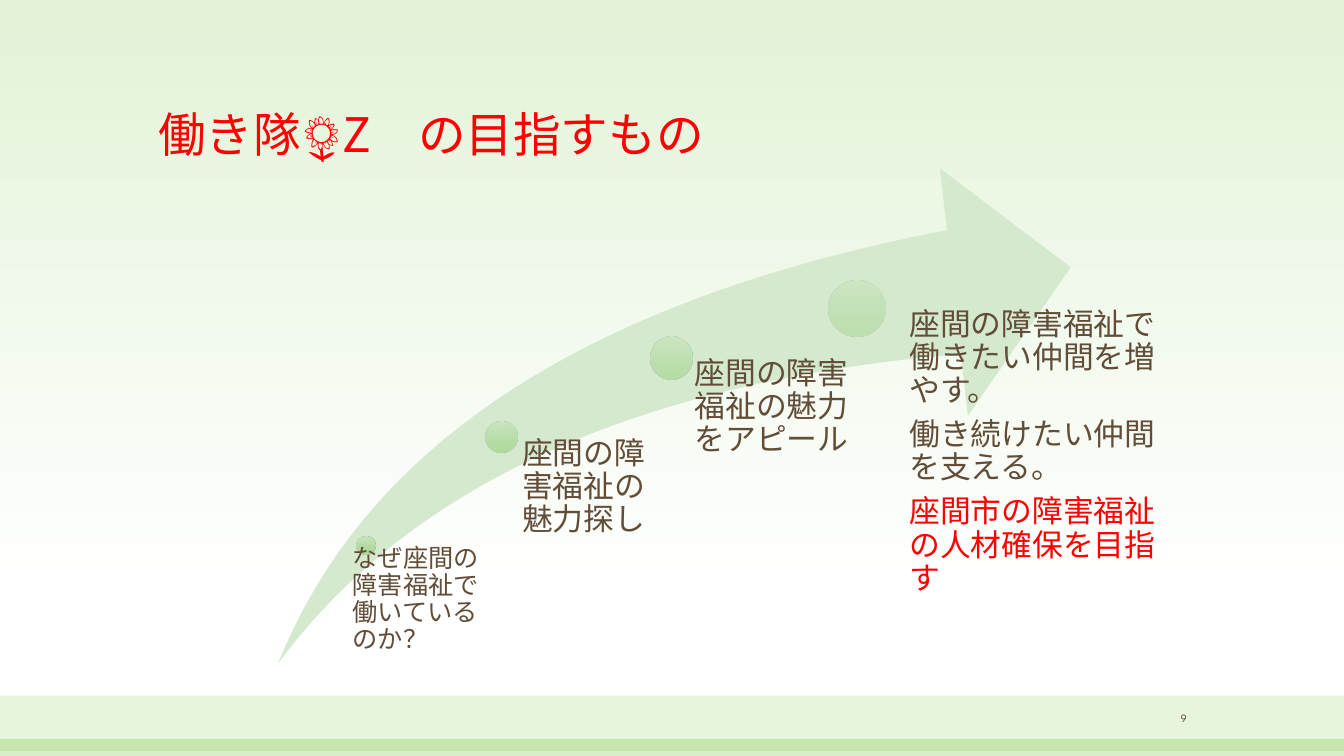
from copy import deepcopy
from lxml.etree import SubElement
from pptx import Presentation
from pptx.dml.color import RGBColor
from pptx.enum.shapes import MSO_SHAPE as Shape
from pptx.enum.text import MSO_ANCHOR as Anchor, MSO_AUTO_SIZE as AutoSize, PP_ALIGN as Align
from pptx.oxml.ns import qn
from pptx.util import Pt

PX = 9144  # 100 px to the inch
JAPANESE = "Noto Sans CJK JP"
BROWN, RED, GREEN = "624D38", "FF0000", "72C23C"


def paint(fill, *colours, positions=(), alpha=100):
    """Fill with one colour, or with a downward gradient of several."""
    if len(colours) == 1:
        fill.solid()
        fill.fore_color.rgb = RGBColor.from_string(colours[0])
    else:
        fill.gradient()
        fill.gradient_angle = 270
        stop_list = fill._xPr.find(".//" + qn("a:gsLst"))
        for _ in colours[2:]:
            stop_list.append(deepcopy(stop_list[0]))
        for stop, colour, position in zip(fill.gradient_stops, colours, positions):
            stop.color.rgb = RGBColor.from_string(colour)
            stop.position = position
    if alpha < 100:
        for colour in fill._xPr.iter(qn("a:srgbClr")):
            SubElement(colour, qn("a:alpha"), val=str(alpha * 1000))


def write(frame, text, size, colours=(BROWN,), font=JAPANESE, align=Align.LEFT,
          anchor=Anchor.TOP, insets=(10, 5, 10, 5), leading=0.9, after=0):
    """Write one paragraph a line; the last colour serves any further lines."""
    frame.word_wrap = True
    frame.auto_size = AutoSize.NONE
    frame.vertical_anchor = anchor
    (frame.margin_left, frame.margin_top,
     frame.margin_right, frame.margin_bottom) = [inset * PX for inset in insets]
    frame.text = text
    for i, paragraph in enumerate(frame.paragraphs):
        paragraph.alignment = align
        paragraph.line_spacing = leading
        paragraph.space_before = Pt(0)
        paragraph.space_after = Pt(after)
        for run in paragraph.runs:
            run.font.size = Pt(size)
            run.font.name = font
            paint(run.font.fill, colours[min(i, len(colours) - 1)])
            SubElement(run.font._element, qn("a:ea"), typeface=font)


deck = Presentation()
deck.slide_width, deck.slide_height = 1333 * PX, 750 * PX
slide = deck.slides.add_slide(deck.slide_layouts[5])
shapes = slide.shapes

# Background and bottom bands
paint(slide.background.fill, "E3F3D8", "FFFFFF", positions=(0, 0.79))

# Bands, growth arrow and milestone dots, from back to front
plain_shapes = [
    (Shape.RECTANGLE, 0, 690, 1333, 55, (GREEN,), 17),
    (Shape.RECTANGLE, 0, 733, 1333, 17, (GREEN,), 28),
    (Shape.SWOOSH_ARROW, 276, 167, 786, 491, ("D5E9CE",), 100),
]
dot_colours = ("C8E5BC", "B3DBA2", "A4D78D")
for left, top, size, alpha in [(354, 532, 18, 90), (482, 418, 31, 77),
                               (645, 334, 42, 63), (822, 278, 56, 50)]:
    plain_shapes.append((Shape.OVAL, left, top, size, size, dot_colours, alpha))

for kind, left, top, width, height, colours, alpha in plain_shapes:
    part = shapes.add_shape(kind, left * PX, top * PX, width * PX, height * PX)
    part.shadow.inherit = False
    part.line.fill.background()
    paint(part.fill, *colours, positions=(0, 0.5, 1), alpha=alpha)
    if kind == Shape.SWOOSH_ARROW:
        part.adjustments[0] = part.adjustments[1] = 0.25

# Title
title = shapes.title
title.left, title.top, title.width, title.height = 147 * PX, 48 * PX, 1040 * PX, 119 * PX
write(title.text_frame, "働き隊🌻Z　の目指すもの", 34, (RED,), anchor=Anchor.BOTTOM)

# Milestone texts, all ending at the foot of the arrow
goals = "座間の障害福祉で働きたい仲間を増やす。\n働き続けたい仲間を支える。\n座間市の障害福祉の人材確保を目指す"
for left, top, width, inset, size, text, colours in [
    (340, 541, 159, 10, 18, "なぜ座間の障害福祉で働いているのか？", (BROWN,)),
    (501, 434, 157, 17, 22, "座間の障害福祉の魅力探し", (BROWN,)),
    (667, 355, 196, 22, 22, "座間の障害福祉の魅力をアピール", (BROWN,)),
    (872, 306, 303, 30, 22, goals, (BROWN, BROWN, RED)),
]:
    milestone = shapes.add_textbox(left * PX, top * PX, width * PX, (658 - top) * PX)
    write(milestone.text_frame, text, size, colours,
          insets=(inset, 0, 0, 0), after=0.35 * size)

# Page number
page_number = shapes.add_textbox(1117 * PX, 699 * PX, 70 * PX, 26 * PX)
write(page_number.text_frame, "9", 8, font="League Spartan", align=Align.RIGHT,
      anchor=Anchor.MIDDLE, leading=1.0)

deck.save("out.pptx")
